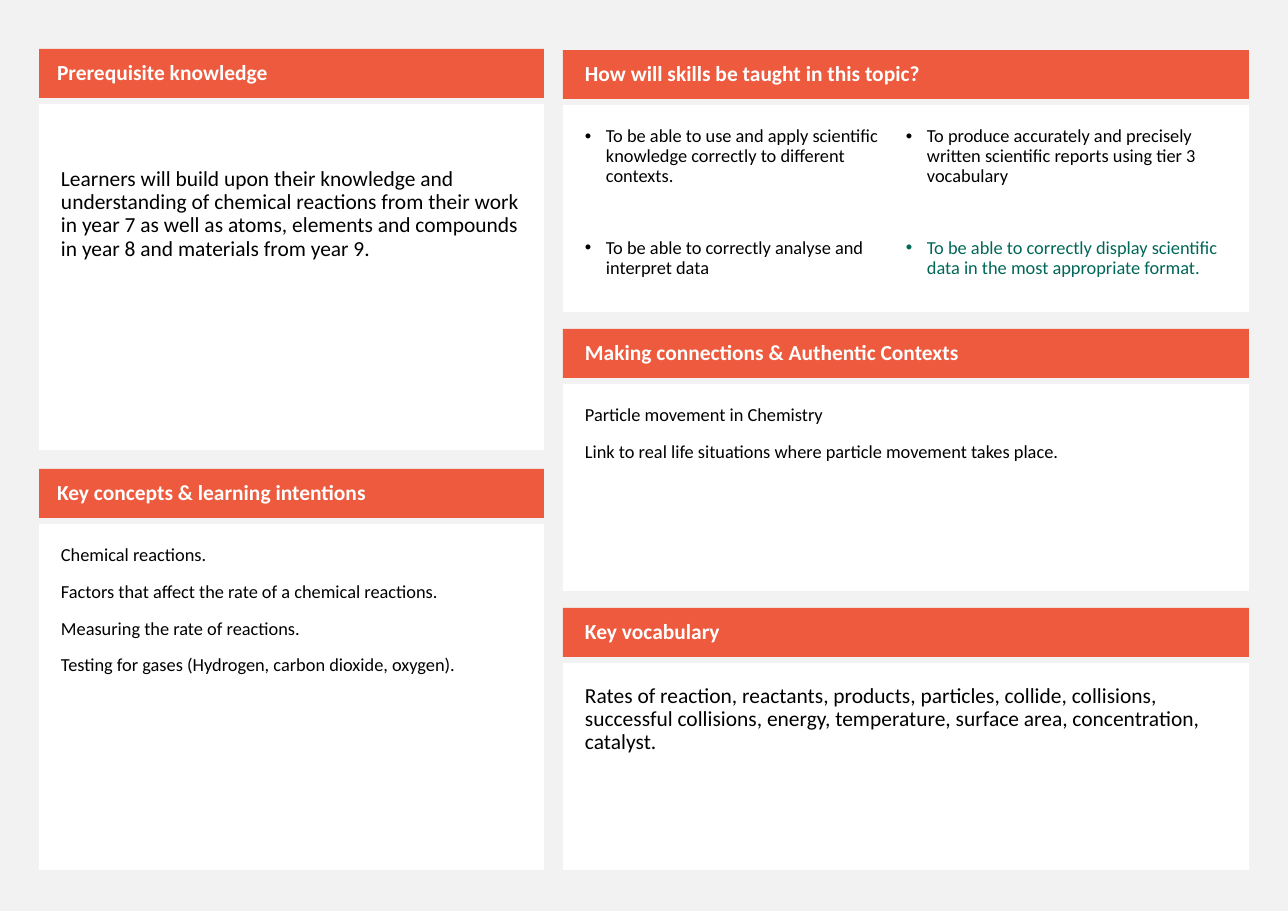
"""Build a one-page topic overview with five headed panels."""
from lxml.etree import SubElement
from pptx import Presentation
from pptx.dml.color import RGBColor
from pptx.enum.text import MSO_ANCHOR, MSO_AUTO_SIZE, PP_ALIGN
from pptx.oxml.ns import qn
from pptx.util import Pt

PX = 8298
WIDE, HIGH = 1288, 911
HEAD, DROP, PAD = 49, 55, 22
HUES = {"page": "F2F2F2", "head": "ED5A3E", "body": "FFFFFF",
        "ink": "000000", "pale": "FFFFFF", "green": "006758"}

LEFT = [
    ("Prerequisite knowledge",
     ["Learners will build upon their knowledge and understanding of chemical "
      "reactions from their work in year 7 as well as atoms, elements and "
      "compounds in year 8 and materials from year 9."],
     {"size": 14, "top": 64}),
    ("Key concepts & learning intentions",
     ["Chemical reactions.",
      "Factors that affect the rate of a chemical reactions.",
      "Measuring the rate of reactions.",
      "Testing for gases (Hydrogen, carbon dioxide, oxygen)."], {}),
]
RIGHT = [
    ("How will skills be taught in this topic?",
     ["To be able to use and apply scientific knowledge correctly to different "
      "contexts.",
      "To be able to correctly analyse and interpret data",
      "To produce accurately and precisely written scientific reports using "
      "tier 3 vocabulary",
      "To be able to correctly display scientific data in the most appropriate "
      "format."],
     {"cols": 2, "dot": True, "gaps": (0, 34), "last": "green"}),
    ("Making connections & Authentic Contexts",
     ["Particle movement in Chemistry",
      "Link to real life situations where particle movement takes place."], {}),
    ("Key vocabulary",
     ["Rates of reaction, reactants, products, particles, collide, collisions, "
      "successful collisions, energy, temperature, surface area, concentration, "
      "catalyst."], {"size": 14}),
]
COLUMNS = [
    {"x": 39, "y": 49, "w": 505, "h": 346, "step": 420, "inset": 18, "panels": LEFT},
    {"x": 563, "y": 50, "w": 686, "h": 207, "step": 279, "inset": PAD, "panels": RIGHT},
]


def write(box, lines, size=12, hue="ink", last=None, bold=False, left=PAD,
          right=PAD, top=PAD, base=PAD, mid=False, cols=1, dot=False, gaps=(11,)):
    frame = box.text_frame
    frame.word_wrap = True
    frame.auto_size = MSO_AUTO_SIZE.NONE
    frame.vertical_anchor = MSO_ANCHOR.MIDDLE if mid else MSO_ANCHOR.TOP
    frame.margin_left, frame.margin_right = left * PX, right * PX
    frame.margin_top, frame.margin_bottom = top * PX, base * PX
    if cols > 1:
        frame._txBody.bodyPr.set("numCol", str(cols))
    for i, line in enumerate(lines):
        para = frame.paragraphs[0] if i == 0 else frame.add_paragraph()
        para.alignment = PP_ALIGN.LEFT
        para.line_spacing = 0.9
        para.space_before = Pt(gaps[i % len(gaps)])
        para.space_after = Pt(0)
        run = para.add_run()
        run.text = line
        font = run.font
        font.name, font.size, font.bold = "Calibri", Pt(size), bold
        tint = last if last and i == len(lines) - 1 else hue
        font.color.rgb = RGBColor.from_string(HUES[tint])
        props = para._p.get_or_add_pPr()
        dent = 21 * PX if dot else 0
        props.set("marL", str(dent))
        props.set("indent", str(-dent))
        if dot:
            SubElement(props, qn("a:buFont"), typeface="Arial")
            SubElement(props, qn("a:buChar"), char="•")
        else:
            SubElement(props, qn("a:buNone"))


def place(slide, slots, x, y, w, h, fill):
    area = [n * PX for n in (x, y, w, h)]
    if slots:
        box = slots.pop(0)
        box.left, box.top, box.width, box.height = area
    else:
        box = slide.shapes.add_textbox(*area)
    box.fill.solid()
    box.fill.fore_color.rgb = RGBColor.from_string(HUES[fill])
    return box


def main():
    deck = Presentation()
    deck.slide_width, deck.slide_height = WIDE * PX, HIGH * PX
    slide = deck.slides.add_slide(deck.slide_layouts[4])
    slide.background.fill.solid()
    slide.background.fill.fore_color.rgb = RGBColor.from_string(HUES["page"])
    title = slide.shapes.title.element
    title.getparent().remove(title)
    slots = list(slide.placeholders)
    for col in COLUMNS:
        x, w = col["x"], col["w"]
        for i, (name, lines, style) in enumerate(col["panels"]):
            y = col["y"] + i * col["step"]
            head = place(slide, slots, x, y, w, HEAD, "head")
            write(head, [name], size=14, hue="pale", bold=True, mid=True,
                  left=col["inset"], right=11, top=5, base=5)
            body = place(slide, slots, x, y + DROP, w, col["h"], "body")
            write(body, lines, **style)
    deck.save("out.pptx")


if __name__ == "__main__":
    main()
